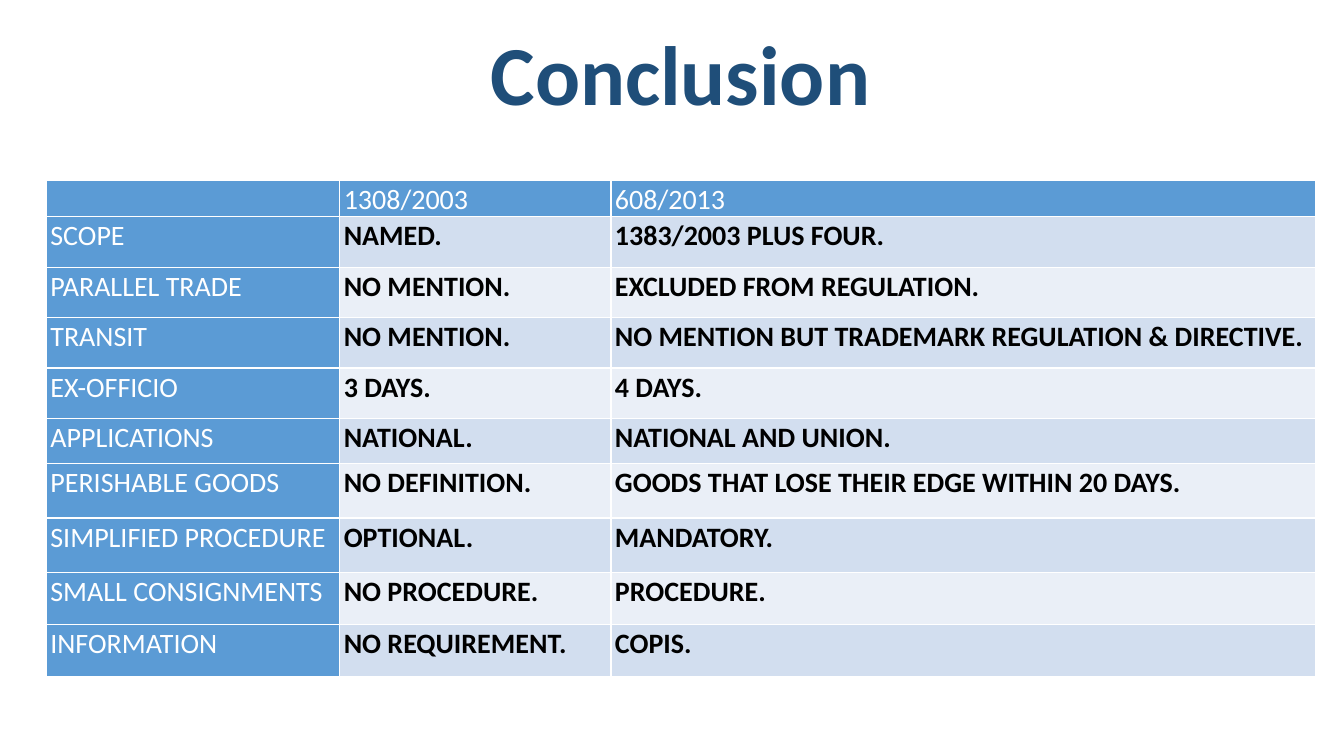
from typing import NamedTuple

from pptx import Presentation
from pptx.dml.color import RGBColor
from pptx.enum.text import MSO_ANCHOR, MSO_AUTO_SIZE, PP_ALIGN
from pptx.util import Inches, Pt

BLUE, NAVY, WHITE, BLACK = "5B9BD5", "1F4E79", "FFFFFF", "000000"
BANDS = ("D2DEEF", "EAEFF7")
WIDTHS = (2.91, 2.69, 6.99)


class Row(NamedTuple):
    topic: str
    old: str
    new: str
    height: float


ROWS = (
    Row("", "1308/2003", "608/2013", 0.36),
    Row("SCOPE", "NAMED.", "1383/2003 PLUS FOUR.", 0.5),
    Row("PARALLEL TRADE", "NO MENTION.", "EXCLUDED FROM REGULATION.", 0.5),
    Row("TRANSIT", "NO MENTION.",
        "NO MENTION BUT TRADEMARK REGULATION & DIRECTIVE.", 0.5),
    Row("EX-OFFICIO", "3 DAYS.", "4 DAYS.", 0.5),
    Row("APPLICATIONS", "NATIONAL.", "NATIONAL AND UNION.", 0.45),
    Row("PERISHABLE GOODS", "NO DEFINITION.",
        "GOODS THAT LOSE THEIR EDGE WITHIN 20 DAYS.", 0.54),
    Row("SIMPLIFIED PROCEDURE", "OPTIONAL.", "MANDATORY.", 0.54),
    Row("SMALL CONSIGNMENTS", "NO PROCEDURE.", "PROCEDURE.", 0.52),
    Row("INFORMATION", "NO REQUIREMENT.", "COPIS.", 0.51),
)


def color(code: str) -> RGBColor:
    return RGBColor.from_string(code)


def style(para, size: float, code: str, bold: bool) -> None:
    font = para.font
    font.name, font.size, font.bold = "Calibri", Pt(size), bold
    font.color.rgb = color(code)


def fill_cell(cell, text: str, fill: str, head: bool) -> None:
    cell.fill.solid()
    cell.fill.fore_color.rgb = color(fill)
    cell.margin_left = cell.margin_right = Inches(0.04)
    cell.margin_top = cell.margin_bottom = 0
    cell.text = text
    para = cell.text_frame.paragraphs[0]
    para.line_spacing = 1.07
    style(para, 20, WHITE if head else BLACK, not head)


def add_title(slide, text: str) -> None:
    title = slide.shapes.title
    title.left, title.top = Inches(0.17), Inches(0.16)
    title.width, title.height = Inches(13.16), Inches(1.11)
    frame = title.text_frame
    frame.text = text
    frame.word_wrap = True
    frame.auto_size = MSO_AUTO_SIZE.SHAPE_TO_FIT_TEXT
    frame.vertical_anchor = MSO_ANCHOR.TOP
    para = frame.paragraphs[0]
    para.alignment = PP_ALIGN.CENTER
    style(para, 60, NAVY, True)


def add_grid(slide) -> None:
    height = sum(row.height for row in ROWS)
    table = slide.shapes.add_table(
        len(ROWS), len(WIDTHS), Inches(0.46), Inches(1.79),
        Inches(sum(WIDTHS)), Inches(height)).table
    # The default table style supplies the white rules
    table.first_col = True
    for column, width in zip(table.columns, WIDTHS):
        column.width = Inches(width)
    for r, row in enumerate(ROWS):
        table.rows[r].height = Inches(row.height)
        for c, text in enumerate((row.topic, row.old, row.new)):
            head = r == 0 or c == 0
            fill = BLUE if head else BANDS[(r - 1) % 2]
            fill_cell(table.cell(r, c), text, fill, head)


def main() -> None:
    deck = Presentation()
    deck.slide_width, deck.slide_height = Inches(13.33), Inches(7.5)
    slide = deck.slides.add_slide(deck.slide_layouts[5])

    # Comparison table
    add_grid(slide)

    # Heading
    add_title(slide, "Conclusion")

    deck.save("out.pptx")


if __name__ == "__main__":
    main()
